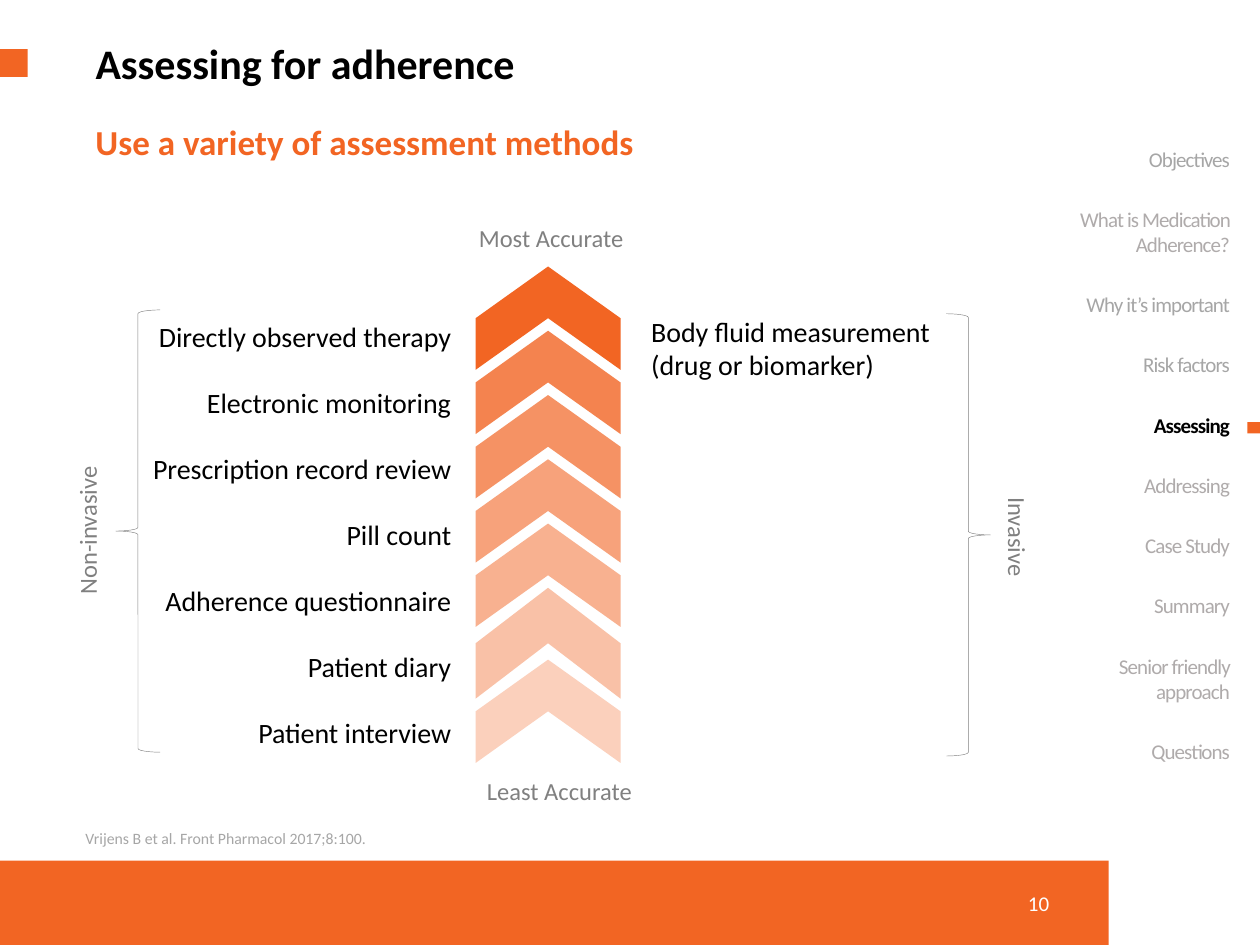
from lxml import etree
from pptx import Presentation
from pptx.dml.color import RGBColor
from pptx.enum import shapes, text
from pptx.oxml.ns import qn
from pptx.util import Inches, Pt

ORANGE = RGBColor(0xF2, 0x65, 0x23)
BLACK = RGBColor(0, 0, 0)
WHITE = RGBColor(0xFF, 0xFF, 0xFF)
GRAY = RGBColor(0x80, 0x80, 0x80)
LIGHT = RGBColor(0xA6, 0xA6, 0xA6)
WARM = RGBColor(0xAF, 0xAB, 0xAB)
LEFT, CENTER, RIGHT = text.PP_ALIGN.LEFT, text.PP_ALIGN.CENTER, text.PP_ALIGN.RIGHT
TOP, MIDDLE = text.MSO_ANCHOR.TOP, text.MSO_ANCHOR.MIDDLE

METHODS = [
    ("Directly observed therapy", 2.67),
    ("Electronic monitoring", 2.17),
    ("Prescription record review", 2.61),
    ("Pill count", 1.12),
    ("Adherence questionnaire", 2.49),
    ("Patient diary", 1.36),
    ("Patient interview", 1.81),
]
CHEVRONS = [
    (1.95, 0.82, 100), (2.46, 0.82, 80), (2.97, 0.82, 70), (3.48, 0.82, 60),
    (3.99, 0.82, 50), (4.53, 0.88, 40), (5.07, 0.82, 30),
]
SECTIONS = [
    ("Objectives", LIGHT), ("What is Medication Adherence?", WARM),
    ("Why it’s important", LIGHT), ("Risk factors", LIGHT), ("Assessing", BLACK),
    ("Addressing", WARM), ("Case Study", WARM), ("Summary", WARM),
    ("Senior friendly approach", WARM), ("Questions", WARM),
]


def add_run(p, words, size, color, bold=False):
    """Add one styled run to a paragraph."""
    r = p.add_run()
    r.text = words
    r.font.name = "Calibri"
    r.font.size = Pt(size)
    r.font.bold = bold
    r.font.color.rgb = color
    return r


def add_label(s, box, words, size, color, bold=False, align=LEFT, anchor=TOP,
              rotation=0, wrap=True):
    """Add a text box holding one paragraph."""
    sp = s.shapes.add_textbox(*map(Inches, box))
    sp.rotation = rotation
    tf = sp.text_frame
    tf.word_wrap = wrap
    tf.vertical_anchor = anchor
    p = tf.paragraphs[0]
    p.alignment = align
    add_run(p, words, size, color, bold)
    return p


def add_block(s, kind, box, rotation=0, opacity=100):
    """Add an orange shape without an outline."""
    sp = s.shapes.add_shape(kind, *map(Inches, box))
    sp.shadow.inherit = False
    sp.rotation = rotation
    sp.fill.solid()
    sp.fill.fore_color.rgb = ORANGE
    sp.line.fill.background()
    if opacity < 100:
        clr = sp.fill._xPr.find(qn("a:solidFill")).find(qn("a:srgbClr"))
        etree.SubElement(clr, qn("a:alpha")).set("val", str(opacity * 1000))


def add_brace(s, left, top, rotation=0):
    """Add a thin gray brace."""
    sp = s.shapes.add_shape(shapes.MSO_SHAPE.LEFT_BRACE, Inches(left), Inches(top),
                            Inches(0.35), Inches(3.51))
    sp.shadow.inherit = False
    sp.rotation = rotation
    sp.fill.background()
    sp.line.color.rgb = GRAY
    sp.line.width = Pt(0.25)


def add_sections(s):
    """Add the section list with the current section in bold."""
    sp = s.shapes.add_textbox(Inches(8.35), Inches(1.11), Inches(1.51), Inches(5.05))
    tf = sp.text_frame
    tf.word_wrap = True
    for i, (name, color) in enumerate(SECTIONS):
        p = tf.add_paragraph() if i else tf.paragraphs[0]
        p.alignment = RIGHT
        p.space_after = Pt(20)
        r = add_run(p, name, 12, color, color == BLACK)
        r.font._element.set("spc", "-50")


def add_frame(s):
    """Add the bars, headings, page number and citation."""
    rect = shapes.MSO_SHAPE.RECTANGLE
    for box in ((0, 0.39, 0.22, 0.22), (0, 6.83, 8.8, 0.67), (9.9, 3.35, 0.1, 0.09)):
        add_block(s, rect, box)
    add_label(s, (8.06, 6.97, 0.52, 0.4), "10", 12, WHITE, anchor=MIDDLE)
    add_label(s, (0.58, 6.53, 5.2, 0.25),
              "Vrijens B et al. Front Pharmacol 2017;8:100.", 9, LIGHT)
    title = add_label(s, (0.66, 0.29, 7.25, 0.5), "Assessing for adherence", 24, BLACK, True)
    title.line_spacing = 0.9
    add_label(s, (0.66, 0.91, 7.87, 0.44), "Use a variety of assessment methods",
              20, ORANGE, True)


def add_scale(s):
    """Add the column of chevrons with its end labels."""
    add_label(s, (3.49, 1.72, 1.77, 0.34), "Most Accurate", 14, GRAY, align=CENTER)
    add_label(s, (3.55, 6.11, 1.78, 0.34), "Least Accurate", 14, GRAY, align=CENTER)
    for top, width, opacity in reversed(CHEVRONS):
        add_block(s, shapes.MSO_SHAPE.CHEVRON, (4.35 - width / 2, top, width, 1.15),
                  270, opacity)


def add_methods(s):
    """Add the methods on both sides with braces and group names."""
    for i, (name, width) in enumerate(METHODS):
        add_label(s, (3.68 - width, 2.49 + i * 0.523, width, 0.37), name, 16, BLACK,
                  align=RIGHT, wrap=False)
    add_label(s, (5.07, 2.44, 2.94, 0.64), "Body fluid measurement (drug or biomarker)",
              16, BLACK, anchor=MIDDLE)
    add_brace(s, 0.92, 2.46)
    add_brace(s, 7.51, 2.49, 180)
    add_label(s, (-1.06, 4.04, 3.51, 0.34), "Non-invasive", 14, GRAY,
              align=CENTER, rotation=270)
    add_label(s, (6.32, 4.09, 3.51, 0.34), "Invasive", 14, GRAY,
              align=CENTER, rotation=90)


def main():
    """Build and save the slide."""
    prs = Presentation()
    prs.slide_width, prs.slide_height = Inches(10), Inches(7.5)
    s = prs.slides.add_slide(prs.slide_layouts[6])
    add_frame(s)
    add_sections(s)
    add_methods(s)
    add_scale(s)
    prs.save("out.pptx")


if __name__ == "__main__":
    main()
